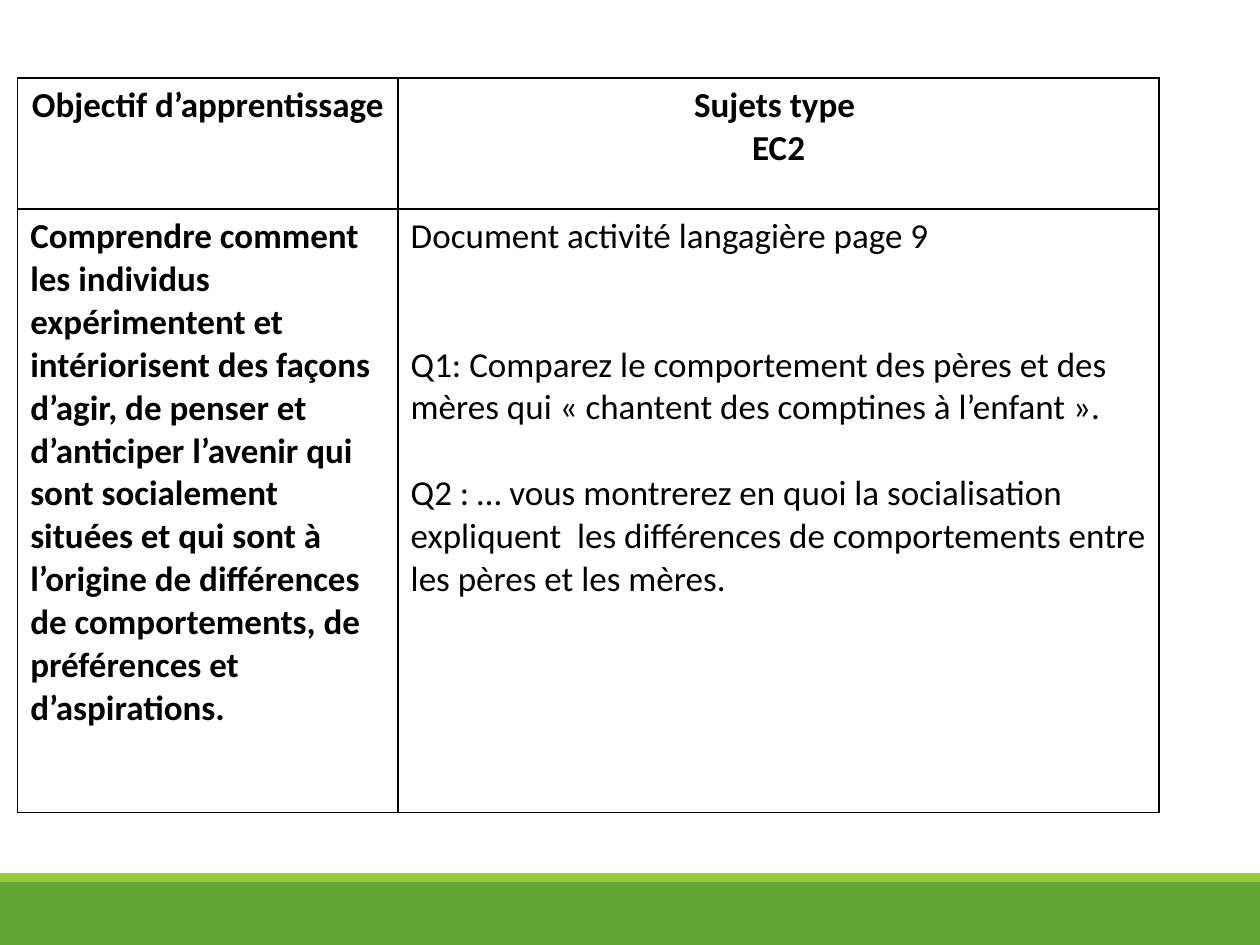
from lxml import etree
from pptx import Presentation
from pptx import util as u
from pptx.dml.color import RGBColor
from pptx.enum import shapes, text
from pptx.oxml import ns

COLORS = {"green": "63A537", "lime": "99CB38", "ink": "000000", "paper": "FFFFFF"}
FONT = "Calibri"
LINE_GAP = 24.4
COLUMNS = (3.02, 6.04)
ROWS = (1.04, 4.79)
OBJECTIVE = (
    "Comprendre comment les individus expérimentent et intériorisent des façons "
    "d’agir, de penser et d’anticiper l’avenir qui sont socialement situées et qui "
    "sont à l’origine de différences de comportements, de préférences et d’aspirations."
)
QUESTION_1 = (
    "Q1: Comparez le comportement des pères et des mères qui "
    "« chantent des comptines à l’enfant »."
)
QUESTION_2 = (
    "Q2 : … vous montrerez en quoi la socialisation expliquent  les différences "
    "de comportements entre les pères et les mères."
)


def color(name):
    return RGBColor.from_string(COLORS[name])


def write_text(p, content, size=20, bold=False, align=text.PP_ALIGN.LEFT, before=0):
    p.alignment = align
    p.space_before = u.Pt(before)
    r = p.add_run()
    r.text = content
    r.font.name = FONT
    r.font.size = u.Pt(size)
    r.font.bold = bold
    r.font.color.rgb = color("ink")


def add_band(s, top, height, fill):
    sp = s.shapes.add_shape(
        shapes.MSO_SHAPE.RECTANGLE, 0, u.Inches(top), u.Inches(10), u.Inches(height)
    )
    sp.shadow.inherit = False
    sp.fill.solid()
    sp.fill.fore_color.rgb = color(fill)
    sp.line.fill.background()


def set_borders(cell, width=1):
    props = cell._tc.get_or_add_tcPr()
    for i, side in enumerate(("lnL", "lnR", "lnT", "lnB")):
        ln = etree.Element(ns.qn(f"a:{side}"), w=str(u.Pt(width)))
        fill = etree.SubElement(ln, ns.qn("a:solidFill"))
        etree.SubElement(fill, ns.qn("a:srgbClr"), val=COLORS["ink"])
        props.insert(i, ln)


def fill_cell(cell, paragraphs, **style):
    cell.fill.solid()
    cell.fill.fore_color.rgb = color("paper")
    set_borders(cell)
    tf = cell.text_frame
    for i, (content, gap_lines) in enumerate(paragraphs):
        p = tf.add_paragraph() if i else tf.paragraphs[0]
        write_text(p, content, before=gap_lines * LINE_GAP, **style)


def add_subject_table(s):
    table = s.shapes.add_table(
        len(ROWS), len(COLUMNS), u.Inches(0.14), u.Inches(0.62),
        u.Inches(sum(COLUMNS)), u.Inches(sum(ROWS)),
    ).table
    table.first_row = table.horz_banding = False
    for column, width in zip(table.columns, COLUMNS):
        column.width = u.Inches(width)
    for row, height in zip(table.rows, ROWS):
        row.height = u.Inches(height)

    heading = {"bold": True, "align": text.PP_ALIGN.CENTER}
    fill_cell(table.cell(0, 0), [("Objectif d’apprentissage ", 0)], **heading)
    fill_cell(table.cell(0, 1), [("Sujets type ", 0), ("EC2", 0)], **heading)
    fill_cell(table.cell(1, 0), [(OBJECTIVE, 0)], bold=True)
    fill_cell(
        table.cell(1, 1),
        [("Document activité langagière page 9", 0), (QUESTION_1, 2), (QUESTION_2, 1)],
    )


def main():
    prs = Presentation()
    prs.slide_width, prs.slide_height = u.Inches(10), u.Inches(7.5)
    s = prs.slides.add_slide(prs.slide_layouts[6])
    add_band(s, 7, 0.5, "green")
    add_band(s, 6.93, 0.07, "lime")
    add_subject_table(s)
    prs.save("out.pptx")


if __name__ == "__main__":
    main()
